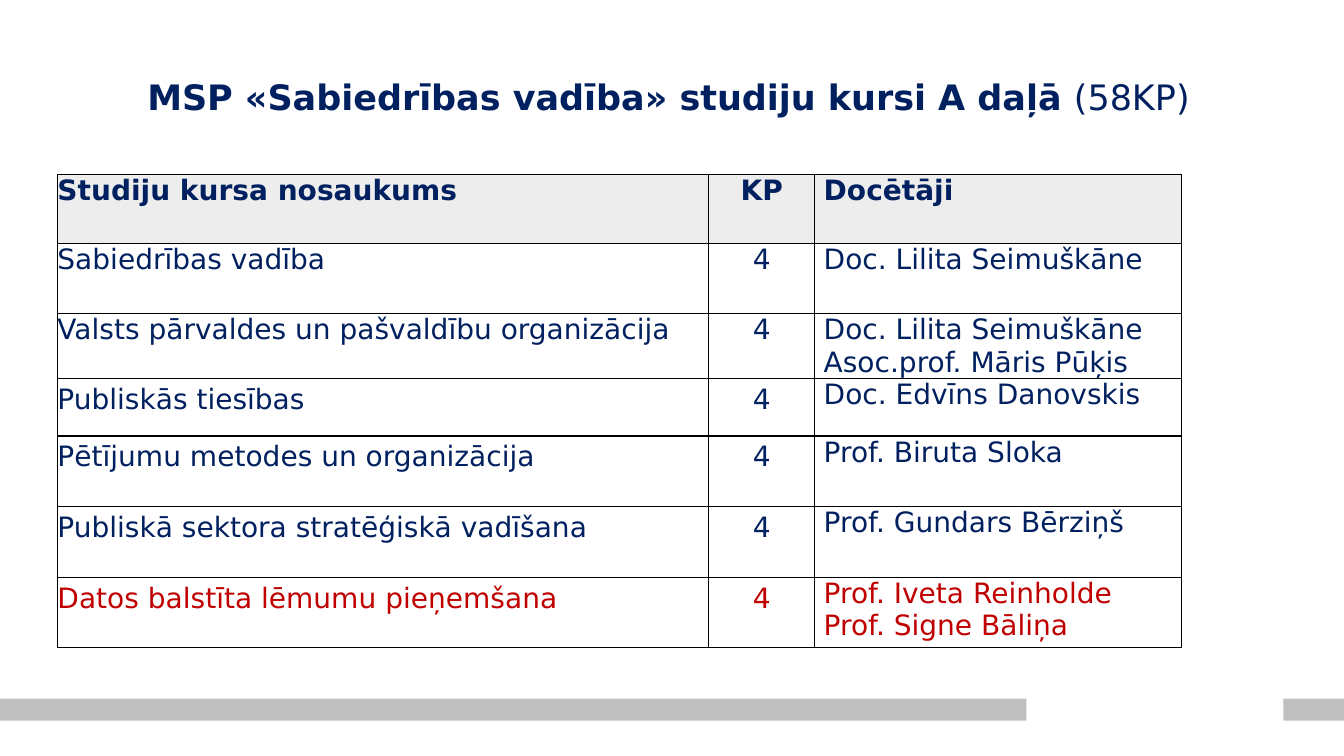
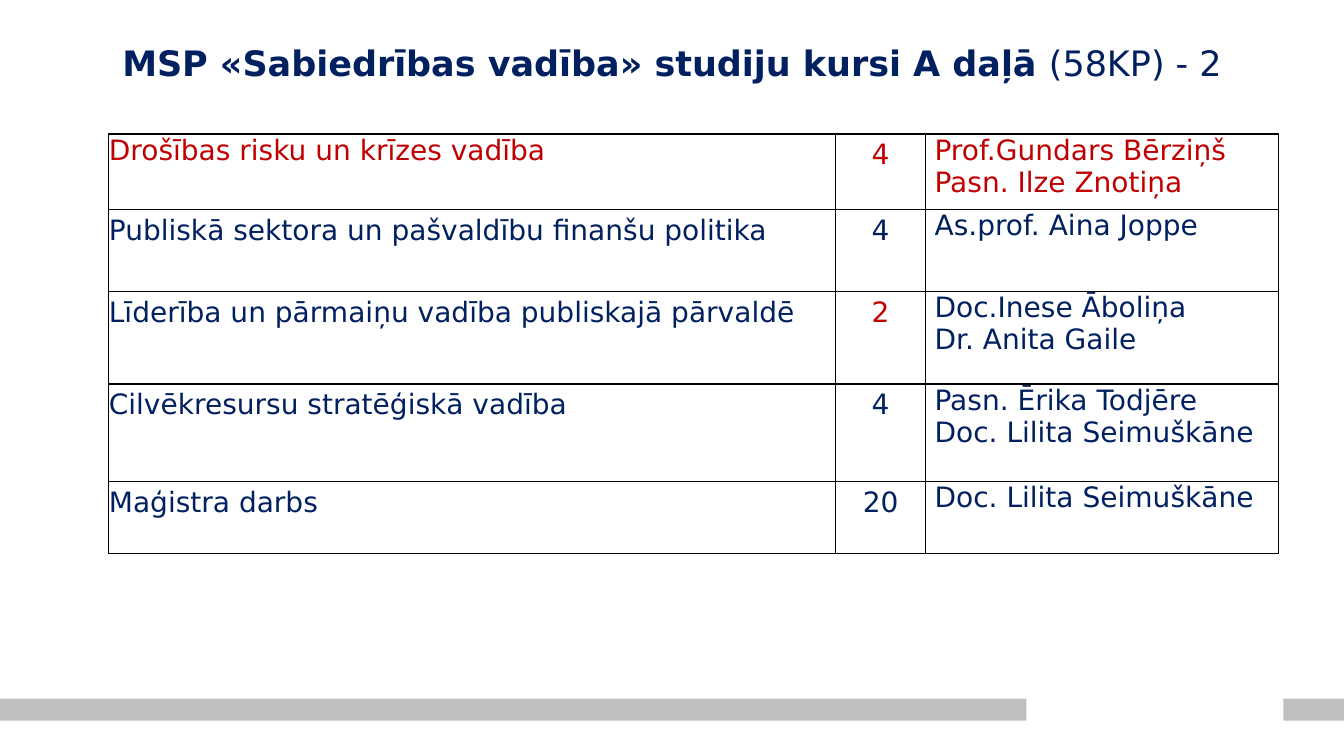
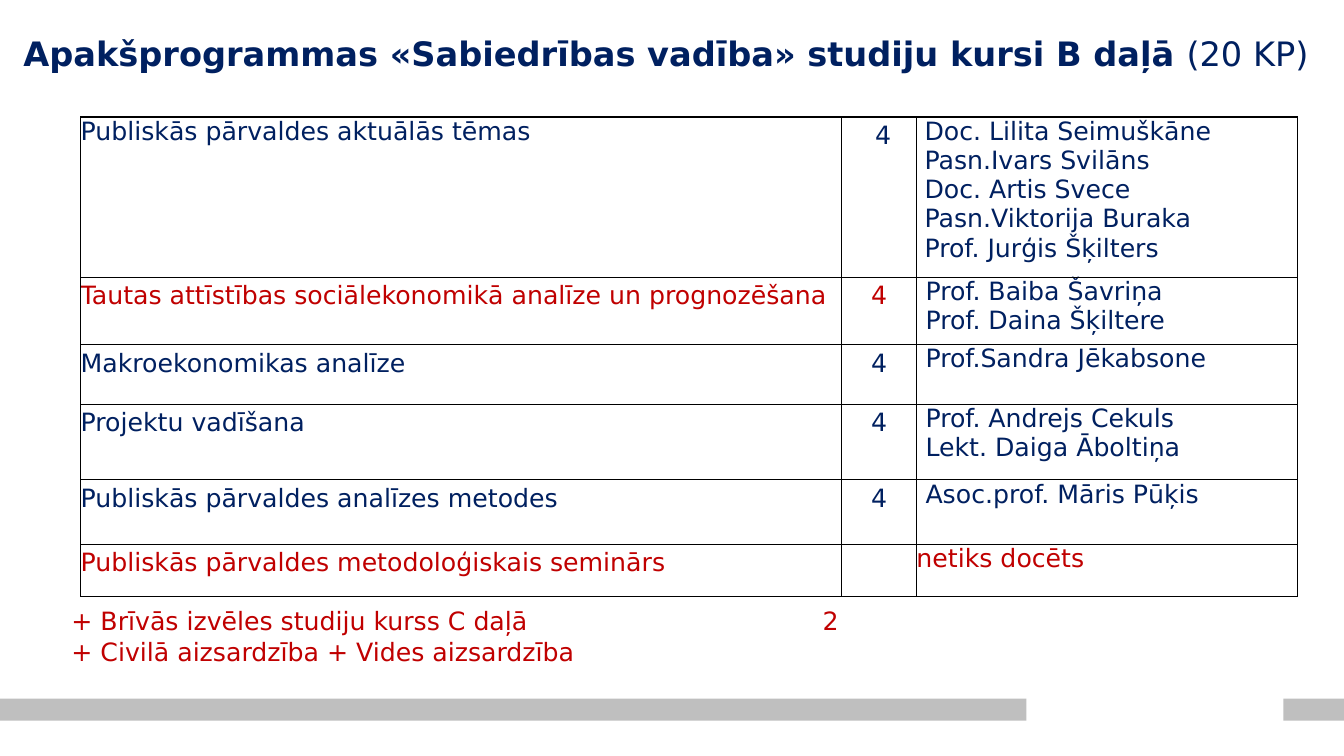
"""Builds three slides of study course tables for a master's programme."""
from dataclasses import dataclass

from lxml.etree import SubElement
from pptx import Presentation
from pptx.dml.color import RGBColor
from pptx.enum.shapes import MSO_SHAPE
from pptx.enum.text import MSO_ANCHOR, MSO_AUTO_SIZE, PP_ALIGN
from pptx.oxml.ns import qn
from pptx.util import Inches, Pt


@dataclass(frozen=True)
class Theme:
    font: str = "DejaVu Sans"
    navy: str = "002060"
    red: str = "C00000"
    band: str = "BFBFBF"
    header: str = "EDEDED"
    border: str = "000000"
    border_width: float = 1
    title_spacing: float = 0.9
    loose_spacing: float = 1.15


@dataclass(frozen=True)
class Row:
    height: float
    course: str
    credits: str
    lecturers: tuple
    red: tuple = ()
    loose: tuple = (0, 1)
    indents: tuple = (0, 0, 0.09)
    header: bool = False


@dataclass(frozen=True)
class CoursePage:
    title: tuple
    title_at: tuple
    title_size: int
    table_at: tuple
    columns: tuple
    text_size: int
    rows: tuple


THEME = Theme()
SLIDE_SIZE = (13.33, 7.5)
BANDS = [(0, 6.93, 10.18, 0.22), (12.73, 6.93, 0.6, 0.22)]
ALL = (0, 1, 2)
ALIGNMENTS = (PP_ALIGN.LEFT, PP_ALIGN.CENTER, PP_ALIGN.LEFT)

PAGES = [
    CoursePage(
        ("MSP «Sabiedrības vadība» studiju kursi A daļā ", "(58KP)"),
        (0.46, 0.57, 12.34, 0.83), 25,
        (0.57, 1.73), (6.46, 1.05, 3.64), 20,
        (
            Row(0.69, "Studiju kursa nosaukums", "KP", ("Docētāji",), loose=(), header=True),
            Row(0.69, "Sabiedrības vadība", "4", ("Doc. Lilita Seimuškāne",), loose=()),
            Row(0.64, "Valsts pārvaldes un pašvaldību organizācija", "4",
                ("Doc. Lilita Seimuškāne", "Asoc.prof. Māris Pūķis"), loose=()),
            Row(0.57, "Publiskās tiesības", "4", ("Doc. Edvīns Danovskis",)),
            Row(0.7, "Pētījumu metodes un organizācija", "4", ("Prof. Biruta Sloka",)),
            Row(0.7, "Publiskā sektora stratēģiskā vadīšana", "4", ("Prof. Gundars Bērziņš",)),
            Row(0.7, "Datos balstīta lēmumu pieņemšana", "4",
                ("Prof. Iveta Reinholde", "Prof. Signe Bāliņa"), red=ALL),
        ),
    ),
    CoursePage(
        ("MSP «Sabiedrības vadība» studiju kursi A daļā ", "(58KP) - 2"),
        (0.19, 0.21, 12.95, 0.87), 25,
        (1.08, 1.33), (7.21, 0.89, 3.5), 20,
        (
            Row(0.75, "Drošības risku un krīzes vadība", "4",
                ("Prof.Gundars Bērziņš", "Pasn. Ilze Znotiņa"), red=ALL, loose=(1,)),
            Row(0.81, "Publiskā sektora un pašvaldību finanšu politika", "4",
                ("As.prof. Aina Joppe",)),
            Row(0.92, "Līderība un pārmaiņu vadība publiskajā pārvaldē", "2",
                ("Doc.Inese Āboliņa", "Dr. Anita Gaile"), red=(1,)),
            Row(0.97, "Cilvēkresursu stratēģiskā vadība", "4",
                ("Pasn. Ērika Todjēre", "Doc. Lilita Seimuškāne")),
            Row(0.71, "Maģistra darbs", "20", ("Doc. Lilita Seimuškāne",)),
        ),
    ),
    CoursePage(
        ("Apakšprogrammas «Sabiedrības vadība» studiju kursi B daļā ", "(20 KP)"),
        (0, 0.12, 13.21, 0.87), 24,
        (0.8, 1.16), (7.55, 0.74, 3.78), 18,
        (
            Row(1.59, "Publiskās pārvaldes aktuālās tēmas", "4",
                ("Doc. Lilita Seimuškāne", "Pasn.Ivars Svilāns", "Doc. Artis Svece",
                 "Pasn.Viktorija Buraka", "Prof. Jurģis Šķilters"),
                loose=(1,), indents=(0, 0.08, 0.08)),
            Row(0.67, "Tautas attīstības sociālekonomikā analīze un prognozēšana", "4",
                ("Prof. Baiba Šavriņa", "Prof. Daina Šķiltere"), red=(0, 1)),
            Row(0.59, "Makroekonomikas analīze", "4", ("Prof.Sandra Jēkabsone",)),
            Row(0.75, "Projektu vadīšana", "4", ("Prof. Andrejs Cekuls", "Lekt. Daiga Āboltiņa")),
            Row(0.64, "Publiskās pārvaldes analīzes metodes", "4", ("Asoc.prof. Māris Pūķis",)),
            Row(0.52, "Publiskās pārvaldes metodoloģiskais seminārs", "",
                ("netiks docēts",), red=ALL, indents=(0, 0, 0)),
        ),
    ),
]

EXTRA_COURSES = [
    "+ Brīvās izvēles studiju kurss C daļā\t2",
    "+ Civilā aizsardzība + Vides aizsardzība",
]
EXTRA_AT = (0.61, 5.96, 9.13, 0.71)
EXTRA_TAB = 7.45
EXTRA_SIZE = 18


def lengths(values):
    return [Inches(value) for value in values]


def add_span(para, text, size, color, bold=False):
    span = para.add_run()
    span.text = text
    span.font.name = THEME.font
    span.font.size = Pt(size)
    span.font.bold = bold
    span.font.color.rgb = RGBColor.from_string(color)


def add_lines(frame, lines, size, color, bold=False, align=PP_ALIGN.LEFT, spacing=1):
    for index, line in enumerate(lines):
        para = frame.paragraphs[0] if index == 0 else frame.add_paragraph()
        para.alignment = align
        para.line_spacing = spacing
        add_span(para, line, size, color, bold)


def set_margins(target, left, top, right, bottom):
    target.margin_left, target.margin_top = Inches(left), Inches(top)
    target.margin_right, target.margin_bottom = Inches(right), Inches(bottom)


def add_bands(deck, page):
    for index, place in enumerate(BANDS):
        band = page.shapes.add_shape(MSO_SHAPE.RECTANGLE, *lengths(place))
        band.shadow.inherit = False
        band.fill.solid()
        band.fill.fore_color.rgb = RGBColor.from_string(THEME.band)
        band.line.fill.background()
        band.name = f"Footer band {index + 1}"
        band.element.nvSpPr.cNvPr.id = 20 + index
        deck.slide_master.shapes.element.append(band.element)


def set_title(page, content):
    title = page.shapes.title
    title.left, title.top, title.width, title.height = lengths(content.title_at)
    frame = title.text_frame
    frame.word_wrap = True
    frame.auto_size = MSO_AUTO_SIZE.NONE
    frame.vertical_anchor = MSO_ANCHOR.MIDDLE
    set_margins(frame, 0.05, 0.05, 0.05, 0.05)
    para = frame.paragraphs[0]
    para.alignment = PP_ALIGN.CENTER
    para.line_spacing = THEME.title_spacing
    for text, bold in zip(content.title, (True, False)):
        add_span(para, text, content.title_size, THEME.navy, bold)


def set_borders(cell):
    properties = cell._tc.get_or_add_tcPr()
    for side in ("a:lnL", "a:lnR", "a:lnT", "a:lnB"):
        line = SubElement(properties, qn(side), w=str(Pt(THEME.border_width)))
        fill = SubElement(line, qn("a:solidFill"))
        SubElement(fill, qn("a:srgbClr"), val=THEME.border)


def fill_cell(cell, row, column, lines, size):
    set_margins(cell, row.indents[column], 0, 0, 0)
    set_borders(cell)
    if row.header:
        cell.fill.solid()
        cell.fill.fore_color.rgb = RGBColor.from_string(THEME.header)
    else:
        cell.fill.background()
    color = THEME.red if column in row.red else THEME.navy
    spacing = THEME.loose_spacing if column in row.loose else 1
    add_lines(cell.text_frame, lines, size, color, row.header, ALIGNMENTS[column], spacing)


def add_course_table(page, content):
    size = (sum(content.columns), sum(row.height for row in content.rows))
    table = page.shapes.add_table(
        len(content.rows), len(content.columns), *lengths(content.table_at + size)).table
    table.first_row = table.horz_banding = False
    for column, width in zip(table.columns, content.columns):
        column.width = Inches(width)
    for index, row in enumerate(content.rows):
        table.rows[index].height = Inches(row.height)
        credits = (row.credits,) if row.credits else ()
        for column, lines in enumerate(((row.course,), credits, row.lecturers)):
            fill_cell(table.cell(index, column), row, column, lines, content.text_size)


def add_extra_courses(page):
    box = page.shapes.add_textbox(*lengths(EXTRA_AT))
    frame = box.text_frame
    frame.word_wrap = True
    add_lines(frame, EXTRA_COURSES, EXTRA_SIZE, THEME.red)
    tabs = SubElement(frame.paragraphs[0]._p.get_or_add_pPr(), qn("a:tabLst"))
    SubElement(tabs, qn("a:tab"), pos=str(Inches(EXTRA_TAB)), algn="l")


def main():
    deck = Presentation()
    deck.slide_width, deck.slide_height = lengths(SLIDE_SIZE)
    title_only = deck.slide_layouts[5]
    for content in PAGES:
        page = deck.slides.add_slide(title_only)
        set_title(page, content)
        add_course_table(page, content)
    add_bands(deck, page)
    add_extra_courses(page)
    deck.save("out.pptx")


if __name__ == "__main__":
    main()
